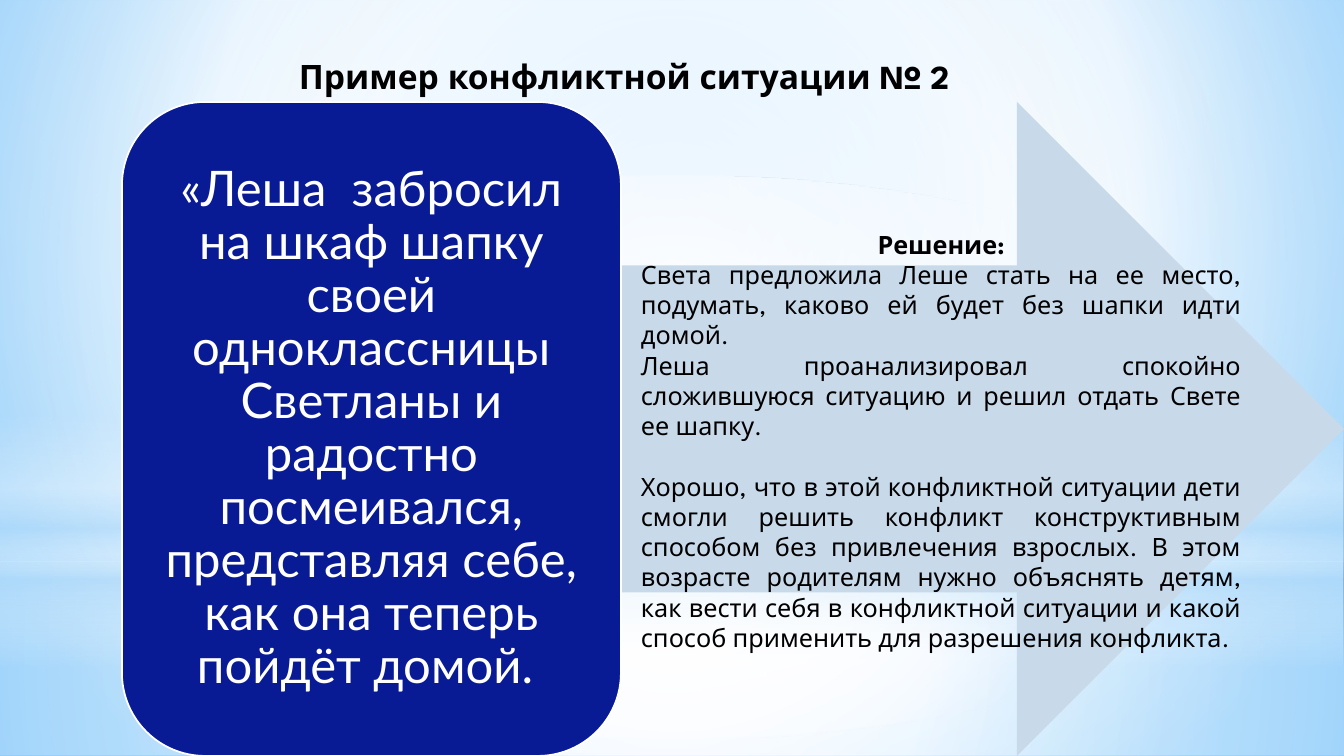
from lxml.etree import SubElement as Sub
from pptx import Presentation
from pptx.dml.color import RGBColor
from pptx.enum.shapes import MSO_SHAPE as Kind
from pptx.enum.text import MSO_ANCHOR as Anchor, PP_ALIGN as Align
from pptx.oxml.ns import qn
from pptx.util import Pt

PX = 914400 / 100.8
WHITE = RGBColor(0xFF, 0xFF, 0xFF)
BLACK = RGBColor(0, 0, 0)
NAVY = RGBColor(0x09, 0x1A, 0x95)
PALE = RGBColor(0xC8, 0xDA, 0xEA)
SKY = RGBColor(0xB4, 0xDC, 0xFA)
LIGHT = RGBColor(0x9E, 0xD5, 0xFF)
BLUE = RGBColor(0x5B, 0xB9, 0xFF)
HEAD = "League Spartan"


def blend(owner, stops, focus):
    owner.fill.solid()
    solid = owner._element.find(".//" + qn("a:solidFill"))
    grad = solid.makeelement(qn("a:gradFill"), {"rotWithShape": "1"})
    solid.getparent().replace(solid, grad)
    ramp = Sub(grad, qn("a:gsLst"))
    for pos, color, alpha in stops:
        stop = Sub(ramp, qn("a:gs"), pos=str(pos * 1000))
        tint = Sub(stop, qn("a:srgbClr"), val=str(color))
        if alpha < 100:
            Sub(tint, qn("a:alpha"), val=str(alpha * 1000))
    if focus:
        way = Sub(grad, qn("a:path"), path="circle")
        sides = {side: str(part * 1000) for side, part in zip("ltrb", focus)}
        Sub(way, qn("a:fillToRect"), sides)
    else:
        Sub(grad, qn("a:lin"), ang="5400000", scaled="0")


def place(kind, *box):
    shape = slide.shapes.add_shape(kind, *[round(n * PX) for n in box])
    shape.shadow.inherit = False
    shape.line.fill.background()
    return shape


deck = Presentation()
deck.slide_width, deck.slide_height = round(1344 * PX), round(756 * PX)
slide = deck.slides.add_slide(deck.slide_layouts[6])

slide.background.fill.solid()
back = slide.background
back._element = slide._element
blend(back, [(0, LIGHT, 100), (60, WHITE, 100), (100, BLUE, 100)], (20, 10, 20, 60))

MID = (50, 50, 50, 50)
layers = [
    (Kind.RECTANGLE, (0, 562, 1344, 194), MID,
     [(0, WHITE, 91), (37, WHITE, 76), (100, SKY, 79)]),
    (Kind.RECTANGLE, (0, 0, 1344, 562), MID,
     [(0, WHITE, 89), (48, WHITE, 62), (100, SKY, 79)]),
    (Kind.RECTANGLE, (0, 415, 1344, 252), None,
     [(0, WHITE, 0), (29, WHITE, 30), (45, SKY, 40),
      (55, WHITE, 26), (65, SKY, 60), (100, WHITE, 0)]),
    (Kind.OVAL, (0, 176, 1344, 562), MID,
     [(0, WHITE, 100), (56, WHITE, 0)]),
]
for kind, box, focus, stops in layers:
    layer = place(kind, *box)
    layer_fill = layer.fill
    blend(layer, stops, focus)

arrow = place(Kind.RIGHT_ARROW, 135, 102, 1209, 654)
arrow.fill.solid()
arrow.fill.fore_color.rgb = PALE

card = place(Kind.ROUNDED_RECTANGLE, 122, 102, 499, 654)
card.fill.solid()
card.fill.fore_color.rgb = NAVY
card.line.color.rgb = WHITE
card.line.width = Pt(1.25)
frame = card.text_frame
frame.word_wrap = True
frame.vertical_anchor = Anchor.MIDDLE
frame.margin_left = frame.margin_right = round(15 * PX)
frame.margin_top = frame.margin_bottom = round(15 * PX)

story = ("«Леша  забросил на шкаф шапку своей одноклассницы Светланы и радостно "
         "посмеивался, представляя себе, как она теперь пойдёт домой. ")
title = "Пример конфликтной ситуации № 2"
answer = [
    "Света предложила Леше стать на ее место, подумать, каково ей будет "
    "без шапки идти домой.",
    "Леша проанализировал спокойно сложившуюся ситуацию и решил отдать "
    "Свете ее шапку.",
    "Хорошо, что в этой конфликтной ситуации дети смогли решить конфликт "
    "конструктивным способом без привлечения взрослых. В этом возрасте "
    "родителям нужно объяснять детям, как вести себя в конфликтной ситуации "
    "и какой способ применить для разрешения конфликта.",
]
frames = [frame]
for box in [(289, 51, 713, 51), (631, 224, 620, 533)]:
    note = slide.shapes.add_textbox(*[round(n * PX) for n in box])
    note.text_frame.word_wrap = True
    frames.append(note.text_frame)

texts = [
    (frames[0], [story], "Lato", 35, WHITE, False, Align.CENTER),
    (frames[1], [title], HEAD, 24, BLACK, True, Align.LEFT),
    (frames[2], ["Решение:"], HEAD, 18, BLACK, True, Align.CENTER),
    (frames[2], answer, HEAD, 18, BLACK, False, Align.JUSTIFY),
]
for frame, lines, face, size, color, bold, align in texts:
    for line in lines:
        para = frame.paragraphs[-1]
        if para.runs:
            para = frame.add_paragraph()
        para.add_run().text = line
        para.alignment = align
        para.font.name = face
        para.font.size = Pt(size)
        para.font.color.rgb = color
        para.font.bold = bold
frames[0].paragraphs[0].line_spacing = 0.9
frames[2].paragraphs[-1].space_before = Pt(21.6)

deck.save("out.pptx")
